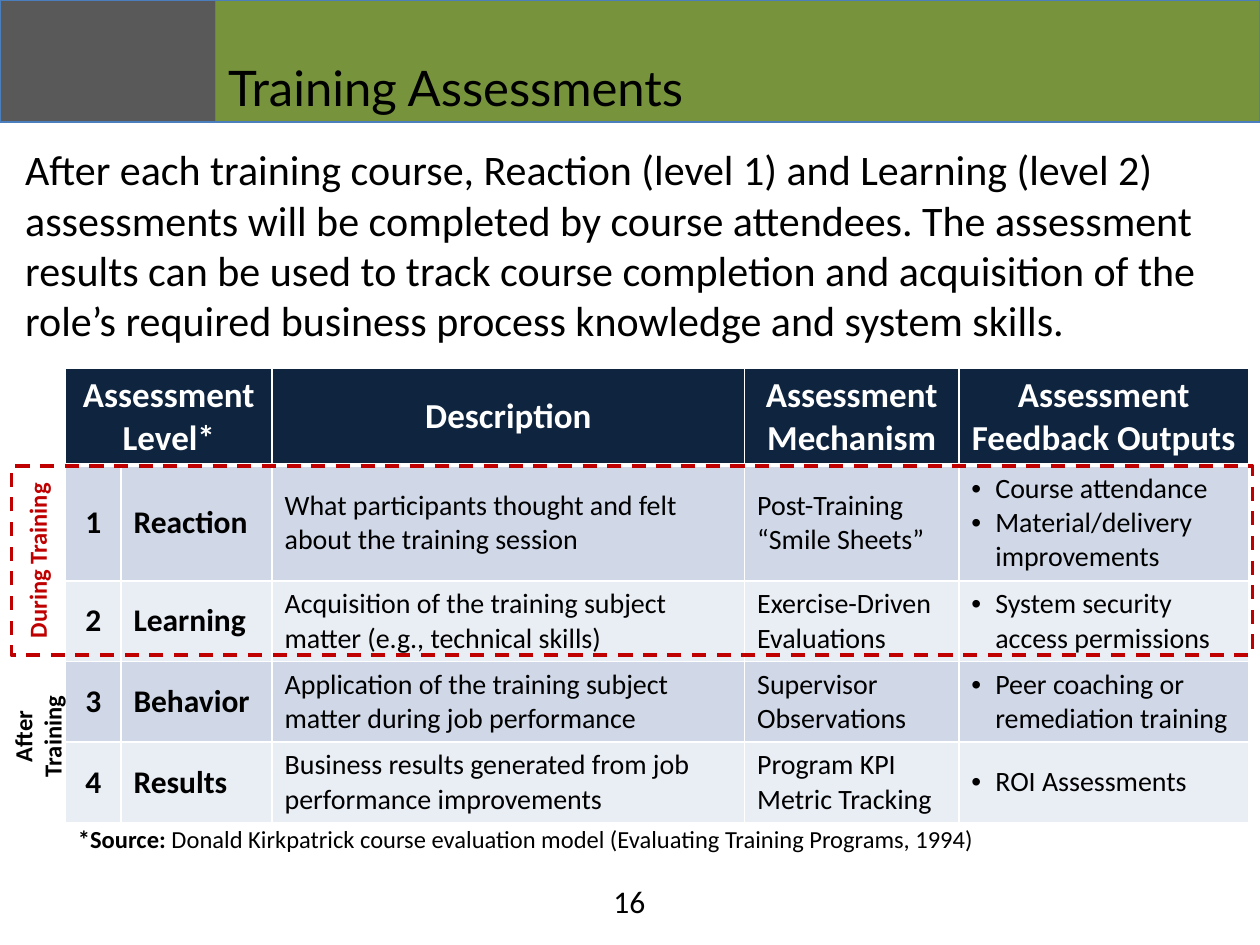
import pptx
import pptx.dml.color
import pptx.enum.dml
import pptx.enum.shapes
import pptx.enum.text
import pptx.oxml
import pptx.oxml.ns
import pptx.util

Inches, Pt = pptx.util.Inches, pptx.util.Pt
ALIGN = pptx.enum.text.PP_ALIGN
ANCHOR = pptx.enum.text.MSO_ANCHOR
NS = pptx.oxml.ns.nsdecls("a")

BLACK, WHITE, RED, NAVY = "000000", "FFFFFF", "C00000", "0F243E"
BANDS = ["D0D8E8", "E9EDF4"]

HEADERS = ["Assessment Level*", "", "Description", "Assessment Mechanism",
           "Assessment Feedback Outputs"]
LEVELS = [
    ("Reaction", "What participants thought and felt about the training session",
     "Post-Training “Smile Sheets”",
     ["Course attendance", "Material/delivery improvements"]),
    ("Learning", "Acquisition of the training subject matter (e.g., technical skills)",
     "Exercise-Driven Evaluations", ["System security access permissions"]),
    ("Behavior", "Application of the training subject matter during job performance",
     "Supervisor Observations", ["Peer coaching or remediation training"]),
    ("Results", "Business results generated from job performance improvements",
     "Program KPI Metric Tracking", ["ROI Assessments"]),
]
COL_WIDTHS = [0.44, 1.2, 3.75, 1.7, 2.3]
ROW_HEIGHTS = [0.77, 0.92, 0.64, 0.64, 0.64]


def rgb(value):
    return pptx.dml.color.RGBColor.from_string(value)


def set_bullet(p, char=None, indent=0):
    """Give the paragraph a hanging bullet, or none at all."""
    pPr = p._p.get_or_add_pPr()
    pPr.set("marL", str(Inches(indent)))
    pPr.set("indent", str(-Inches(indent)))
    if char:
        pPr.append(pptx.oxml.parse_xml(f'<a:buFont {NS} typeface="Arial"/>'))
        pPr.append(pptx.oxml.parse_xml(f'<a:buChar {NS} char="{char}"/>'))
    else:
        pPr.append(pptx.oxml.parse_xml(f"<a:buNone {NS}/>"))


def set_borders(cell, color, bottom):
    tcPr = cell._tc.get_or_add_tcPr()
    widths = {"lnL": 1, "lnR": 1, "lnT": 1, "lnB": bottom}
    for i, (tag, width) in enumerate(widths.items()):
        tcPr.insert(i, pptx.oxml.parse_xml(
            f'<a:{tag} {NS} w="{Pt(width)}"><a:solidFill>'
            f'<a:srgbClr val="{color}"/></a:solidFill></a:{tag}>'))


class SlideBuilder:
    font = "Calibri"

    def __init__(self, slide):
        self.s = slide

    def run(self, p, text, size, color=BLACK, bold=False, font=None):
        r = p.add_run()
        r.text = text
        r.font.name = font or self.font
        r.font.size = Pt(size)
        r.font.bold = bold
        r.font.color.rgb = rgb(color)

    def rect(self, box, fill=None, line=BLACK, width=0.75, dash=None):
        sp = self.s.shapes.add_shape(
            pptx.enum.shapes.MSO_SHAPE.RECTANGLE, *map(Inches, box))
        sp.shadow.inherit = False
        if fill:
            sp.fill.solid()
            sp.fill.fore_color.rgb = rgb(fill)
        else:
            sp.fill.background()
        sp.line.color.rgb = rgb(line)
        sp.line.width = Pt(width)
        if dash:
            sp.line.dash_style = dash
        return sp

    def placeholder(self, sp, box, text, size, anchor, font=None):
        sp.left, sp.top, sp.width, sp.height = map(Inches, box)
        tf = sp.text_frame
        tf.auto_size = pptx.enum.text.MSO_AUTO_SIZE.NONE
        tf.vertical_anchor = anchor
        p = tf.paragraphs[0]
        set_bullet(p)
        p.alignment = ALIGN.LEFT
        p.space_before = Pt(0)
        self.run(p, text, size, font=font)

    def text(self, box, runs, size, color=BLACK, align=ALIGN.CENTER, upward=False):
        """Add a one-paragraph box; runs are (text, bold) pairs."""
        tf = self.s.shapes.add_textbox(*map(Inches, box)).text_frame
        tf.word_wrap = True
        tf.vertical_anchor = ANCHOR.MIDDLE
        if upward:
            tf._txBody.bodyPr.set("vert", "vert270")
        p = tf.paragraphs[0]
        p.alignment = align
        for text, bold in runs:
            self.run(p, text, size, color, bold)

    def cell(self, cell, lines, size, fill, color=BLACK, bold=False,
             align=ALIGN.LEFT, bullet=None, bottom=1):
        cell.fill.solid()
        cell.fill.fore_color.rgb = rgb(fill)
        set_borders(cell, WHITE, bottom)
        cell.vertical_anchor = ANCHOR.MIDDLE
        tf = cell.text_frame
        for i, line in enumerate(lines):
            p = tf.add_paragraph() if i else tf.paragraphs[0]
            p.alignment = align
            if bullet:
                set_bullet(p, bullet, 0.19)
            if line:
                self.run(p, line, size, color, bold)

    def table(self, left, top):
        table = self.s.shapes.add_table(
            len(ROW_HEIGHTS), len(COL_WIDTHS), Inches(left), Inches(top),
            Inches(sum(COL_WIDTHS)), Inches(sum(ROW_HEIGHTS))).table
        for col, width in zip(table.columns, COL_WIDTHS):
            col.width = Inches(width)
        for row, height in zip(table.rows, ROW_HEIGHTS):
            row.height = Inches(height)
        for c, header in enumerate(HEADERS):
            self.cell(table.cell(0, c), [header], 20, NAVY, WHITE, True,
                      ALIGN.CENTER, bottom=3)
        table.cell(0, 0).merge(table.cell(0, 1))
        for n, (level, description, mechanism, outputs) in enumerate(LEVELS, 1):
            fill = BANDS[(n - 1) % 2]
            cells = [table.cell(n, c) for c in range(len(COL_WIDTHS))]
            self.cell(cells[0], [str(n)], 18, fill, bold=True, align=ALIGN.CENTER)
            self.cell(cells[1], [level], 18, fill, bold=True)
            self.cell(cells[2], [description], 16, fill)
            self.cell(cells[3], [mechanism], 16, fill)
            self.cell(cells[4], outputs, 16, fill, bullet="•")


def main():
    prs = pptx.Presentation()
    prs.slide_width, prs.slide_height = Inches(10), Inches(7.5)
    s = prs.slides.add_slide(prs.slide_layouts[1])
    b = SlideBuilder(s)
    title, body = s.shapes.title, s.placeholders[1]

    for left, width, fill in [(0, 1.71, "595959"), (1.71, 8.29, "77933C")]:
        banner = b.rect((left, 0, width, 0.97), fill, "4B7EBC")
        title._element.addprevious(banner._element)  # behind the title
    b.placeholder(title, (1.71, 0, 5.21, 0.97), "Training Assessments", 28,
                  ANCHOR.BOTTOM, "Lato")
    b.placeholder(
        body, (0.1, 1.09, 9.79, 1.75),
        "After each training course, Reaction (level 1) and Learning (level 2) "
        "assessments will be completed by course attendees. The assessment "
        "results can be used to track course completion and acquisition of the "
        "role’s required business process knowledge and system skills.",
        24, ANCHOR.TOP)
    b.text((3.83, 6.95, 2.33, 0.4), [("16", False)], 18)

    b.table(0.52, 2.92)
    b.text((0.52, 6.51, 9.39, 0.3),
           [("*Source:", True),
            (" Donald Kirkpatrick course evaluation model "
             "(Evaluating Training Programs, 1994)", False)],
           14, align=ALIGN.LEFT)

    b.rect((0.09, 3.7, 9.85, 1.5), line=RED, width=2,
           dash=pptx.enum.dml.MSO_LINE.DASH)
    b.text((0.09, 3.7, 0.41, 1.5), [("During Training", True)], 14, RED, upward=True)
    b.text((0.09, 5.2, 0.41, 1.29), [("After Training", True)], 14, upward=True)
    prs.save("out.pptx")


if __name__ == "__main__":
    main()
